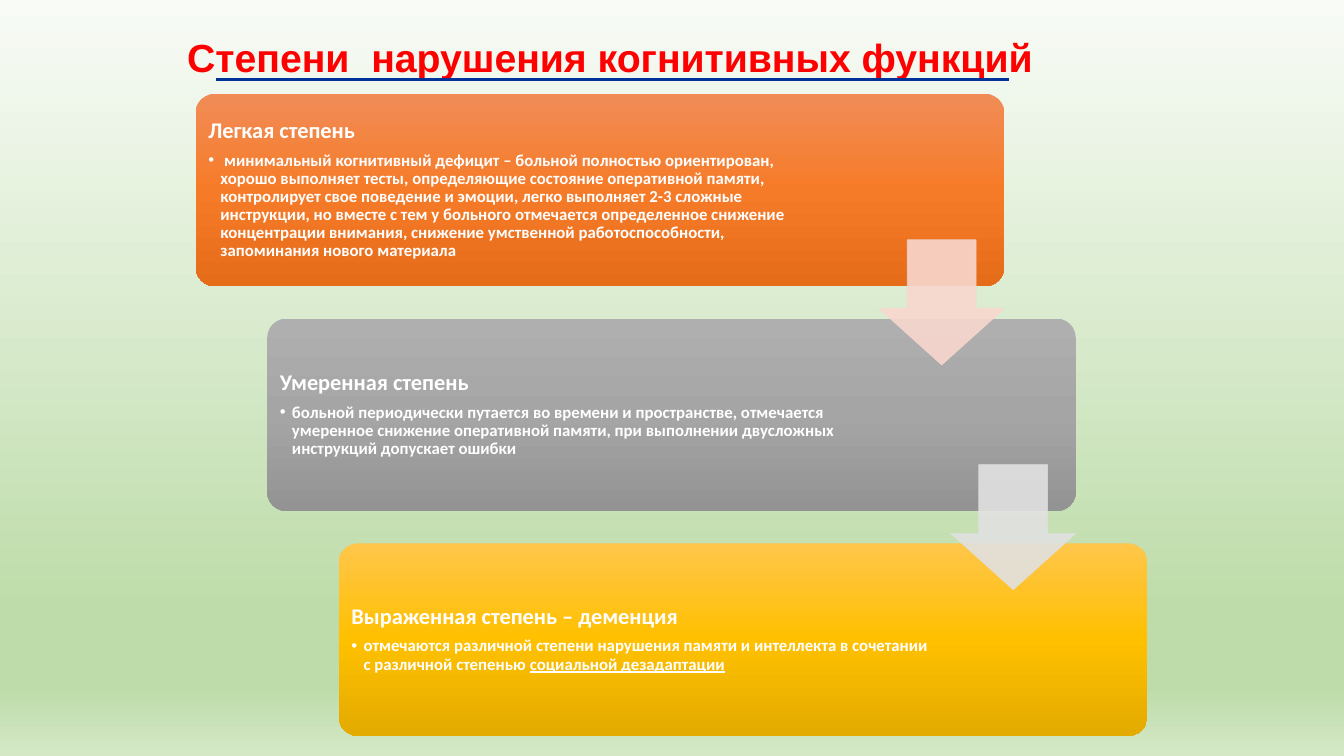
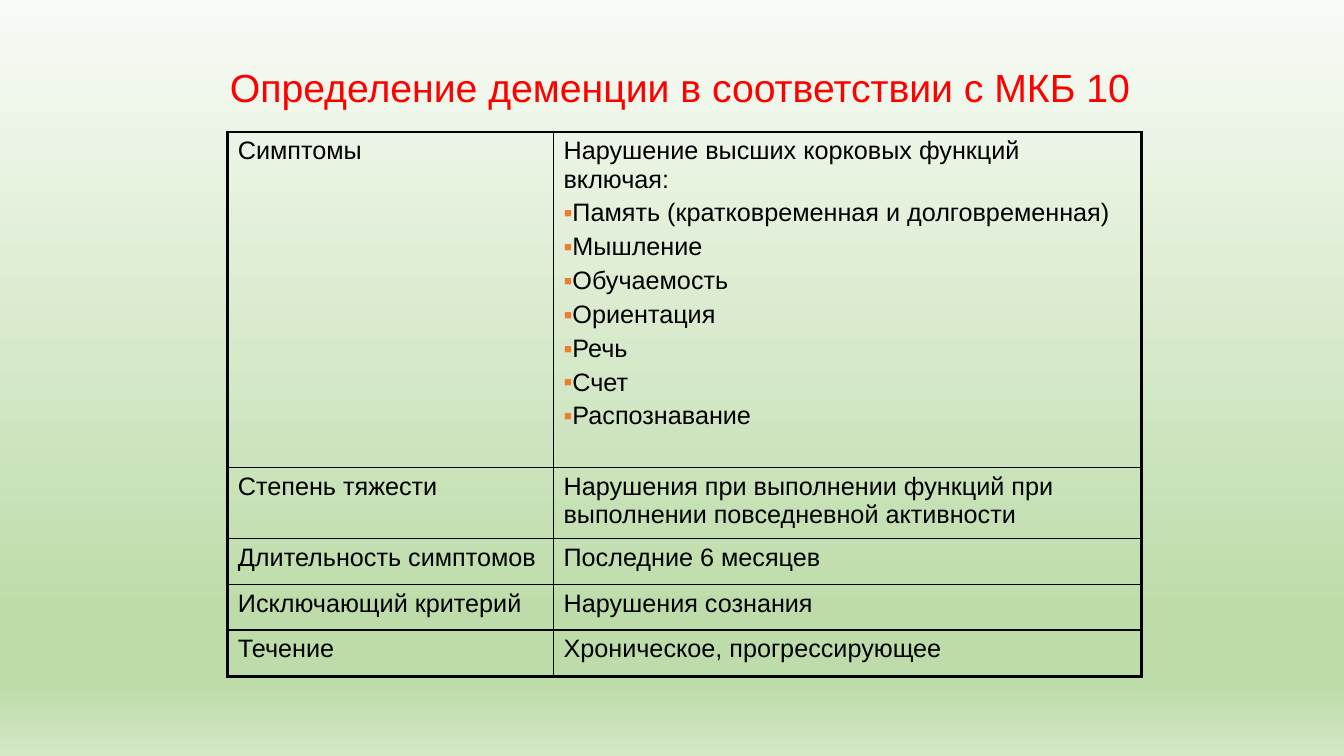
from lxml import etree
from pptx import Presentation
from pptx.dml.color import RGBColor
from pptx.enum import shapes, text
from pptx.oxml import ns
from pptx.util import Inches, Pt

RED = RGBColor(0xFF, 0x00, 0x00)
BLUE = RGBColor(0x00, 0x33, 0x99)
BLACK = RGBColor(0x00, 0x00, 0x00)
WHITE = RGBColor(0xFF, 0xFF, 0xFF)
ORANGE = RGBColor(0xED, 0x7D, 0x31)
PINK = RGBColor(0xF8, 0xD7, 0xCE)
SILVER = RGBColor(0xE1, 0xE1, 0xE1)

BACKDROP = [
    (0, RGBColor(0xF8, 0xFB, 0xF6)),
    (81, RGBColor(0xBE, 0xDC, 0xAA)),
    (91, RGBColor(0xBE, 0xDC, 0xAA)),
    (100, RGBColor(0xD4, 0xE8, 0xC6)),
]
ORANGE_FADE = [
    (0, RGBColor(0xF1, 0x8C, 0x57)),
    (50, RGBColor(0xF6, 0x7B, 0x28)),
    (100, RGBColor(0xE5, 0x6C, 0x19)),
]
GREY_FADE = [
    (0, RGBColor(0xAF, 0xAF, 0xAF)),
    (50, RGBColor(0xA5, 0xA5, 0xA5)),
    (100, RGBColor(0x93, 0x93, 0x93)),
]
GOLD_FADE = [
    (0, RGBColor(0xFF, 0xC6, 0x4B)),
    (50, RGBColor(0xFF, 0xC0, 0x00)),
    (100, RGBColor(0xE3, 0xAB, 0x00)),
]


def paint_gradient(fill, element, stops):
    fill.gradient()
    fill.gradient_angle = 270
    stop_list = next(element.iter(ns.qn("a:gsLst")))
    for stop in list(stop_list):
        stop_list.remove(stop)
    for percent, color in stops:
        stop = etree.SubElement(stop_list, ns.qn("a:gs"), pos=str(percent * 1000))
        etree.SubElement(stop, ns.qn("a:srgbClr"), val=str(color))


def add_bullet(para, symbol, hang, color):
    props = para._p.get_or_add_pPr()
    props.set("marL", str(hang))
    props.set("indent", str(-hang))
    holder = etree.SubElement(props, ns.qn("a:buClr"))
    etree.SubElement(holder, ns.qn("a:srgbClr"), val=str(color))
    etree.SubElement(props, ns.qn("a:buFont"), typeface="Arial")
    etree.SubElement(props, ns.qn("a:buChar"), char=symbol)


deck = Presentation()
deck.slide_width = Inches(13.33)
deck.slide_height = Inches(7.5)
master = deck.slide_master
paint_gradient(master.background.fill, master._element, BACKDROP)

titles = [
    ("Степени  нарушения когнитивных функций", 0, 0.28, 12.1, True, text.PP_ALIGN.CENTER),
    ("Определение деменции в соответствии с МКБ 10", 2.18, 0.58, 9.86, False, text.PP_ALIGN.LEFT),
]
pages = []
for wording, left, top, width, bold, alignment in titles:
    page = deck.slides.add_slide(deck.slide_layouts.get_by_name("Title Only"))
    title = page.shapes.title
    title.left, title.top = Inches(left), Inches(top)
    title.width, title.height = Inches(width), Inches(0.57)
    title.text_frame.text = wording
    title.text_frame.vertical_anchor = text.MSO_ANCHOR.MIDDLE
    para = title.text_frame.paragraphs[0]
    para.alignment = alignment
    font = para.runs[0].font
    font.name, font.size, font.bold = "Arial", Pt(28), bold
    font.color.rgb = RED
    pages.append(page)
degrees_page, definition_page = pages

degrees = [
    (
        "Легкая степень",
        [" минимальный когнитивный дефицит – больной полностью ориентирован, хорошо выполняет "
         "тесты, определяющие состояние оперативной памяти, контролирует свое поведение и эмоции, "
         "легко выполняет 2-3 сложные инструкции, но вместе с тем у больного отмечается "
         "определенное снижение концентрации внимания, снижение умственной работоспособности, "
         "запоминания нового материала"],
        ORANGE_FADE,
    ),
    (
        "Умеренная степень",
        ["больной периодически путается во времени и пространстве, отмечается умеренное снижение "
         "оперативной памяти, при выполнении двусложных инструкций допускает ошибки"],
        GREY_FADE,
    ),
    (
        "Выраженная степень – деменция",
        ["отмечаются различной степени нарушения памяти и интеллекта в сочетании "
         "с различной степенью ", "социальной дезадаптации"],
        GOLD_FADE,
    ),
]
CARD_LEFT, CARD_TOP = 1.94, 0.93
CARD_WIDTH, CARD_HEIGHT = 8.02, 1.91
STEP_RIGHT, STEP_DOWN = 0.71, 2.23
ARROW = 1.24

for index, (heading, details, fade) in enumerate(degrees):
    card = degrees_page.shapes.add_shape(
        shapes.MSO_SHAPE.ROUNDED_RECTANGLE,
        Inches(CARD_LEFT + index * STEP_RIGHT), Inches(CARD_TOP + index * STEP_DOWN),
        Inches(CARD_WIDTH), Inches(CARD_HEIGHT))
    card.adjustments[0] = 0.1
    card.shadow.inherit = False
    card.line.fill.background()
    paint_gradient(card.fill, card._element, fade)
    frame = card.text_frame
    frame.word_wrap = True
    frame.vertical_anchor = text.MSO_ANCHOR.MIDDLE
    frame.margin_left = frame.margin_top = frame.margin_bottom = Inches(0.07)
    frame.margin_right = Inches(2.01)
    frame.text = heading
    detail = frame.add_paragraph()
    detail.text = details[0]
    for underlined in details[1:]:
        span = detail.add_run()
        span.text = underlined
        span.font.underline = True
    for para, size, gap in zip(frame.paragraphs, (16, 12), (5.6, 1.8)):
        para.alignment = text.PP_ALIGN.LEFT
        para.line_spacing = 0.9
        para.space_after = Pt(gap)
        for span in para.runs:
            span.font.name, span.font.size, span.font.bold = "Calibri", Pt(size), True
            span.font.color.rgb = WHITE
    add_bullet(detail, "•", Inches(0.12), WHITE)

for index, color in enumerate((PINK, SILVER)):
    arrow = degrees_page.shapes.add_shape(
        shapes.MSO_SHAPE.DOWN_ARROW,
        Inches(CARD_LEFT + CARD_WIDTH - ARROW + index * STEP_RIGHT),
        Inches(CARD_TOP + CARD_HEIGHT - 0.46 + index * STEP_DOWN),
        Inches(ARROW), Inches(ARROW))
    arrow.adjustments[0] = 0.55
    arrow.adjustments[1] = 0.45
    arrow.shadow.inherit = False
    arrow.fill.solid()
    arrow.fill.fore_color.rgb = color
    arrow.line.color.rgb = color
    arrow.line.width = Pt(0.5)
    for paint in arrow._element.spPr.iter(ns.qn("a:srgbClr")):
        etree.SubElement(paint, ns.qn("a:alpha"), val="90000")

underline = degrees_page.shapes.add_connector(
    shapes.MSO_CONNECTOR.STRAIGHT, Inches(2.14), Inches(0.79), Inches(10.01), Inches(0.79))
underline.line.color.rgb = BLUE
underline.line.width = Pt(2.25)
etree.SubElement(underline._element.spPr, ns.qn("a:effectLst"))

criteria = [
    ("Симптомы", ["Нарушение высших корковых функций включая:",
                  "Память (кратковременная и долговременная)", "Мышление", "Обучаемость",
                  "Ориентация", "Речь", "Счет", "Распознавание"]),
    ("Степень тяжести", ["Нарушения при выполнении функций при выполнении повседневной активности"]),
    ("Длительность симптомов", ["Последние 6 месяцев"]),
    ("Исключающий критерий", ["Нарушения сознания"]),
    ("Течение", ["Хроническое, прогрессирующее"]),
]
table = definition_page.shapes.add_table(
    len(criteria), 2, Inches(2.26), Inches(1.31), Inches(9.06), Inches(5.4)).table
table.first_row = False
table.horz_banding = False
for column, width in zip(table.columns, (3.23, 5.83)):
    column.width = Inches(width)
for row, height in zip(table.rows, (3.33, 0.7, 0.46, 0.45, 0.46)):
    row.height = Inches(height)

last_row = len(criteria) - 1
for row_index, (label, lines) in enumerate(criteria):
    for column_index, entries in enumerate(([label], lines)):
        cell = table.cell(row_index, column_index)
        cell.text_frame.text = "\n".join(entries)
        for entry_index, para in enumerate(cell.text_frame.paragraphs):
            font = para.runs[0].font
            font.name, font.size = "Arial", Pt(18)
            font.color.rgb = BLACK
            if entry_index:
                para.space_before = Pt(4)
                add_bullet(para, "▪", 0, ORANGE)
        cell.fill.background()
        outer_edges = {
            "a:lnL": column_index == 0,
            "a:lnR": column_index == 1,
            "a:lnT": row_index == 0,
            "a:lnB": row_index == last_row,
        }
        cell_props = cell._tc.get_or_add_tcPr()
        for position, (edge, is_outer) in enumerate(outer_edges.items()):
            border = etree.Element(ns.qn(edge), w=str(Pt(2.25 if is_outer else 1)))
            solid = etree.SubElement(border, ns.qn("a:solidFill"))
            etree.SubElement(solid, ns.qn("a:srgbClr"), val=str(BLACK))
            cell_props.insert(position, border)

deck.save("out.pptx")
